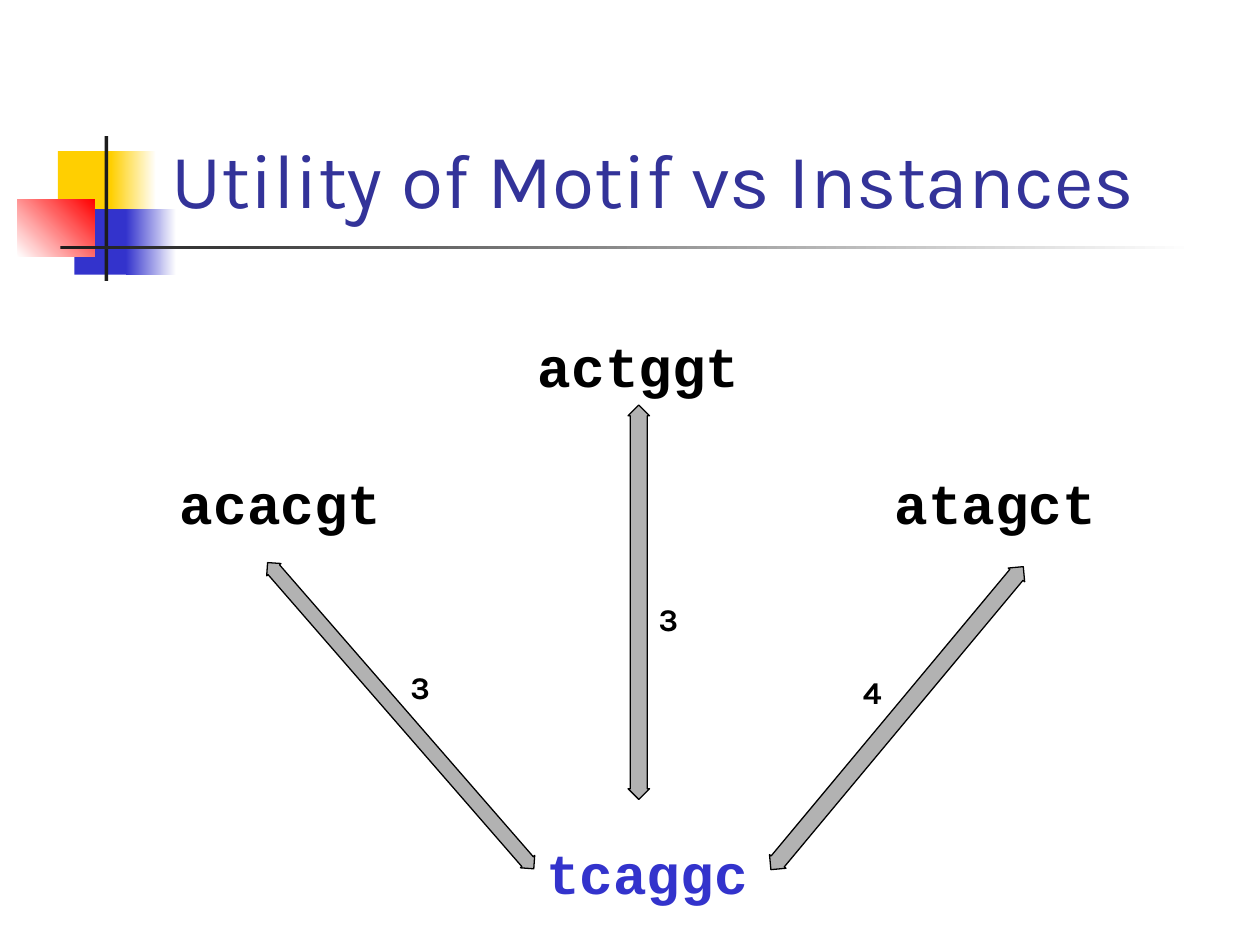
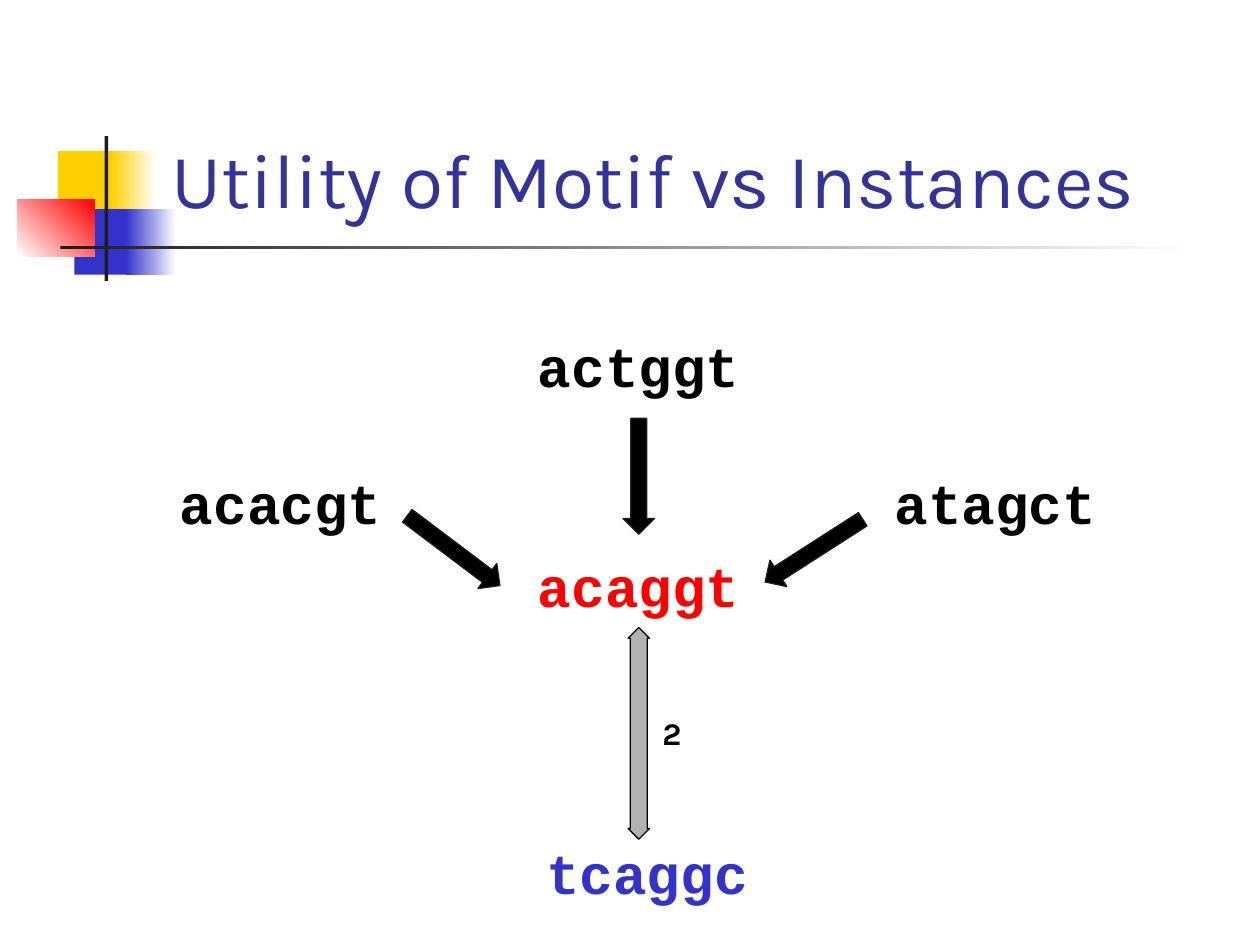
from pptx import Presentation
from pptx import util as u
from pptx.dml.color import RGBColor
from pptx.enum import shapes, text

COLORS = {
    "title": "333399", "black": "000000", "white": "FFFFFF", "ink": "1C1C1C",
    "yellow": "FFCF01", "blue": "3333CC", "red": "FF0000", "grey": "B2B2B2",
}
SANS, MONO = "Karla", "Courier New"
KIND = shapes.MSO_SHAPE
TITLE = "Utility of Motif vs Instances"

# Grid for the sequences, in inches
LEFT, CENTRE, RIGHT = 1.33, 4.17, 7.0
TOP, MIDDLE, CONSENSUS, BOTTOM = 2.58, 3.67, 4.33, 6.61
WORD_W, WORD_H = 1.81, 0.63
DIGIT_W, DIGIT_H = 0.36, 0.4
AXIS = 5.07


def color(name):
    return RGBColor.from_string(COLORS[name])


def add_block(slide, kind, box, fill, line=None, angle=0):
    """Add a shape; fill is one colour name or a (start, end) pair for a gradient."""
    sp = slide.shapes.add_shape(kind, *[u.Inches(v) for v in box])
    sp.shadow.inherit = False
    if isinstance(fill, tuple):
        sp.fill.gradient()
        sp.fill.gradient_angle = angle
        for stop, name in zip(sp.fill.gradient_stops, fill):
            stop.color.rgb = color(name)
    else:
        sp.fill.solid()
        sp.fill.fore_color.rgb = color(fill)
    if line:
        sp.line.color.rgb = color(line)
        sp.line.width = u.Pt(0.75)
    else:
        sp.line.fill.background()
    return sp


prs = Presentation()
prs.slide_width, prs.slide_height = u.Inches(10), u.Inches(7.5)
layout = prs.slide_layouts[5]
slides = [prs.slides.add_slide(layout) for _ in range(2)]

# Shared ornament: drawn once, then moved to the layout
ornament = [
    ((0.46, 1.2, 0.48, 0.52), "yellow", 0),
    ((0.88, 1.2, 0.36, 0.52), ("yellow", "white"), 0),
    ((0.59, 1.66, 0.46, 0.52), "blue", 0),
    ((1.0, 1.66, 0.4, 0.52), ("blue", "white"), 0),
    ((0.14, 1.58, 0.61, 0.46), ("white", "red"), 45),
    ((0.83, 1.08, 0.03, 1.15), "ink", 0),
    ((0.48, 1.95, 9.0, 0.03), ("ink", "white"), 0),
]
for number, (box, fill, angle) in enumerate(ornament, start=20):
    sp = add_block(slides[0], KIND.RECTANGLE, box, fill, angle=angle)
    sp.element.nvSpPr.cNvPr.set("id", str(number))
    layout.shapes.element.append(sp.element)

# Words: text, left, top, colour
shared_words = [
    ("acacgt", LEFT, MIDDLE, "black"),
    ("atagct", RIGHT, MIDDLE, "black"),
    ("actggt", CENTRE, TOP, "black"),
    ("tcaggc", CENTRE + 0.06, BOTTOM, "blue"),
]
extra_words = [[], [("acaggt", CENTRE, CONSENSUS, "red")]]

# Distances: text, left, top
distances = [
    [("3", 3.16, 5.25), ("3", 5.13, 4.71), ("4", 6.75, 5.29)],
    [("2", 5.16, 5.62)],
]

# Arrows: centre x, centre y, width, length, rotation
distance_arrows = [
    [(3.18, 5.68, 0.15, 3.22, 319), (7.12, 5.7, 0.17, 3.13, 39.8),
     (AXIS, 4.78, 0.17, 3.13, 0)],
    [(AXIS, 5.82, 0.17, 1.68, 0)],
]
merge_arrows = [
    [],
    [(AXIS, 3.78, 0.25, 0.92, 0), (6.46, 4.37, 0.25, 0.92, 57.3),
     (3.6, 4.37, 0.25, 0.92, 307)],
]

for i, s in enumerate(slides):
    title = s.shapes.title
    title.left, title.top = u.Inches(1.26), u.Inches(0.23)
    title.width, title.height = u.Inches(8.52), u.Inches(1.6)
    tf = title.text_frame
    tf.auto_size = text.MSO_AUTO_SIZE.NONE
    tf.vertical_anchor = text.MSO_ANCHOR.BOTTOM
    p = tf.paragraphs[0]
    p.alignment = text.PP_ALIGN.LEFT
    r = p.add_run()
    r.text = TITLE
    r.font.name, r.font.size = SANS, u.Pt(44)
    r.font.color.rgb = color("title")

    labels = [(word, x, y, WORD_W, WORD_H, MONO, 32, name)
              for word, x, y, name in shared_words + extra_words[i]]
    labels += [(digit, x, y, DIGIT_W, DIGIT_H, SANS, 18, "black")
               for digit, x, y in distances[i]]
    for label, x, y, w, h, font, size, name in labels:
        tf = s.shapes.add_textbox(*[u.Inches(v) for v in (x, y, w, h)]).text_frame
        tf.word_wrap = False
        tf.auto_size = text.MSO_AUTO_SIZE.SHAPE_TO_FIT_TEXT
        p = tf.paragraphs[0]
        p.alignment = text.PP_ALIGN.CENTER if name == "blue" else text.PP_ALIGN.LEFT
        r = p.add_run()
        r.text = label
        r.font.name, r.font.size, r.font.bold = font, u.Pt(size), True
        r.font.color.rgb = color(name)

    for arrows, kind, fill, line in (
        (distance_arrows[i], KIND.UP_DOWN_ARROW, "grey", "black"),
        (merge_arrows[i], KIND.DOWN_ARROW, "black", "ink"),
    ):
        for x, y, w, length, rotation in arrows:
            box = (x - w / 2, y - length / 2, w, length)
            sp = add_block(s, kind, box, fill, line)
            sp.rotation = rotation
            if kind == KIND.UP_DOWN_ARROW:
                sp.adjustments[0], sp.adjustments[1] = 0.5, 0.8

prs.save("out.pptx")
